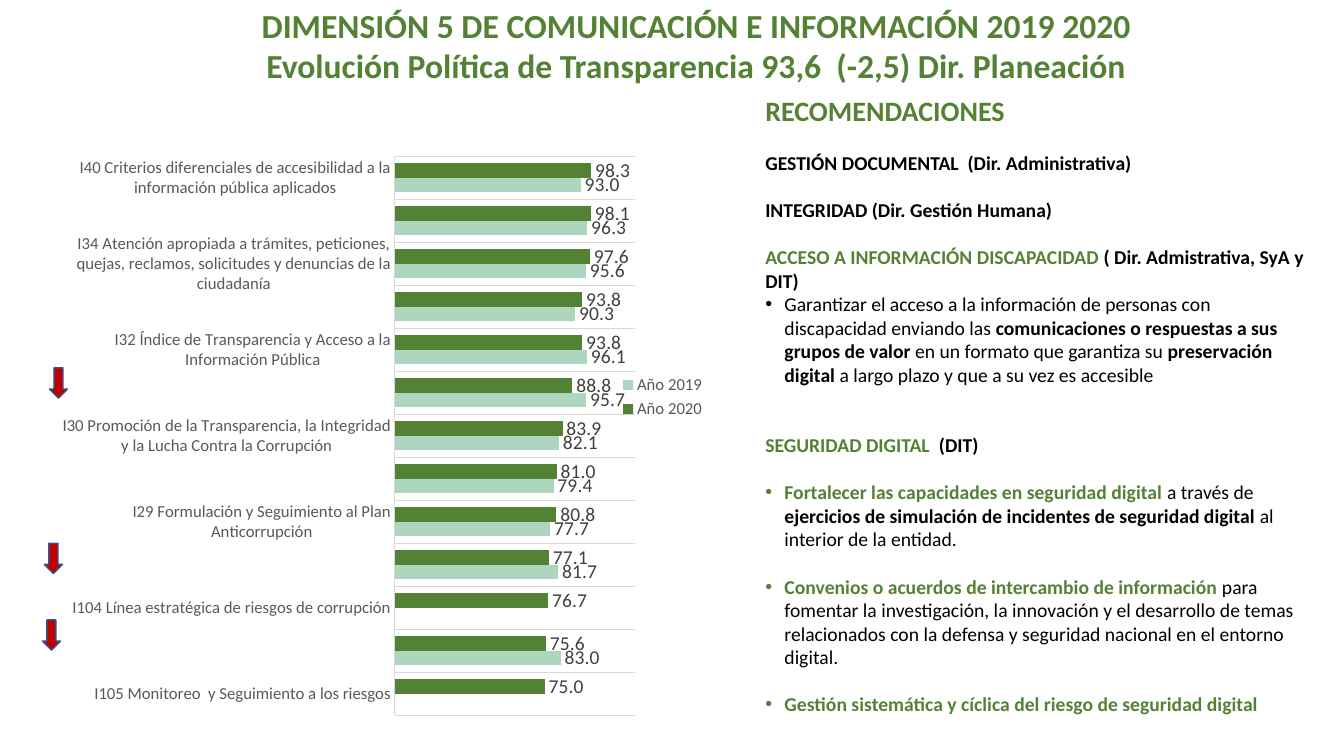
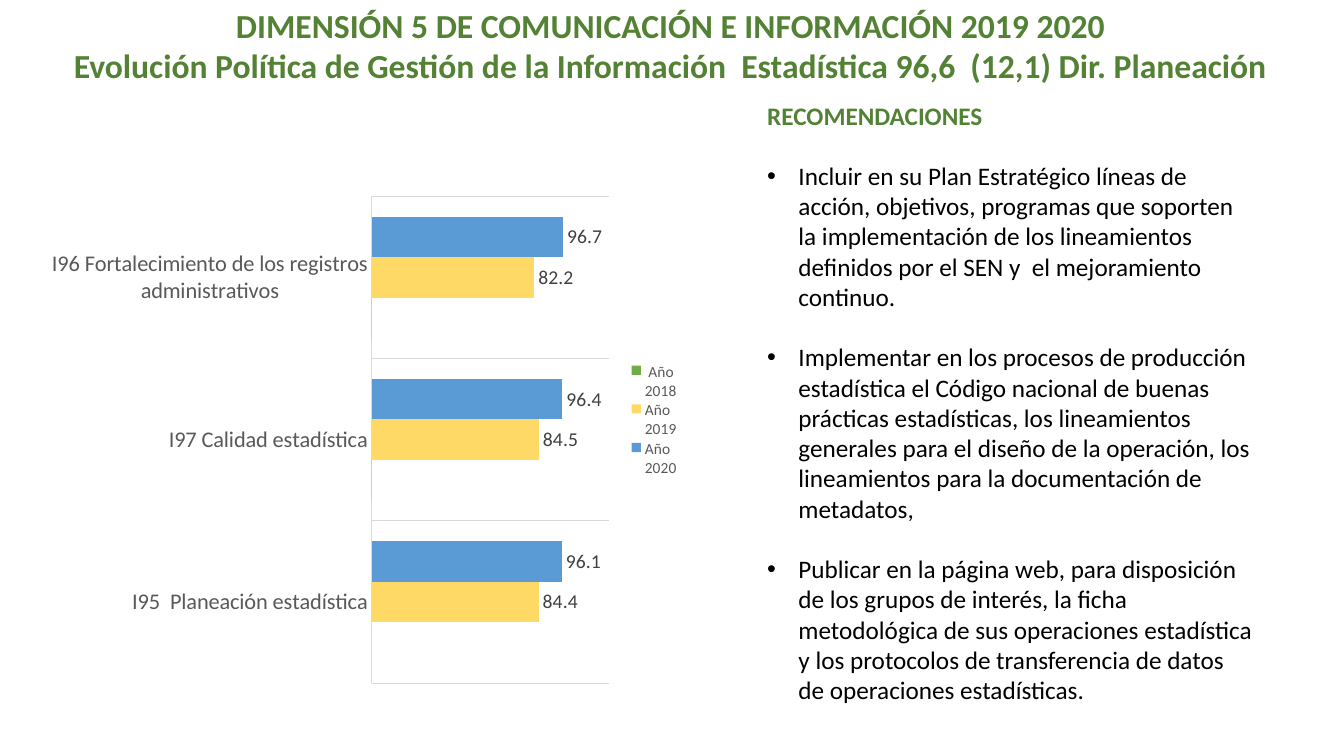
from dataclasses import dataclass

from lxml import etree
from pptx import Presentation
from pptx.chart.data import CategoryChartData
from pptx.dml.color import RGBColor
from pptx.enum import chart as charts, shapes, text
from pptx.oxml import ns
from pptx.util import Inches, Pt


@dataclass(frozen=True)
class Theme:
    font: str = "Calibri"
    green: RGBColor = RGBColor.from_string("548235")
    black: RGBColor = RGBColor.from_string("000000")
    axis_text: RGBColor = RGBColor.from_string("595959")
    label_text: RGBColor = RGBColor.from_string("404040")
    grid: RGBColor = RGBColor.from_string("D9D9D9")
    arrow: RGBColor = RGBColor.from_string("C00000")
    arrow_line: RGBColor = RGBColor.from_string("325491")
    title_size: int = 24
    label_size: int = 14


theme = Theme()
GREEN, BLACK = theme.green, theme.black


def style_font(font, size, color=None, bold=None):
    font.name = theme.font
    font.size = Pt(size)
    if color is not None:
        font.color.rgb = color
    if bold is not None:
        font.bold = bold


def set_layout(parent, position, bounds, inner=False):
    for old in parent.findall(ns.qn("c:layout")):
        parent.remove(old)
    layout = etree.Element(ns.qn("c:layout"))
    parent.insert(position, layout)
    manual = etree.SubElement(layout, ns.qn("c:manualLayout"))
    settings = [("layoutTarget", "inner")] if inner else []
    settings += [("xMode", "edge"), ("yMode", "edge")]
    settings += zip("xywh", bounds)
    for name, value in settings:
        etree.SubElement(manual, ns.qn("c:" + name)).set("val", str(value))


slides = [
    {
        "title": ["DIMENSIÓN 5 DE COMUNICACIÓN E INFORMACIÓN 2019 2020",
                  "Evolución Política de Transparencia 93,6  (-2,5) Dir. Planeación"],
        "title_box": (2.26, 0, 9.29, 0.91),
        "body_box": (7.49, 0.88, 5.6, 6.33), "body_outline": "rect",
        "heading_size": 20, "body_size": 14, "indent": 0.19,
        "body": [
            (0, False, [("RECOMENDACIONES", GREEN, True)]),
            (1, False, [("GESTIÓN DOCUMENTAL  (Dir. Administrativa)", BLACK, True)]),
            (1, False, [("INTEGRIDAD (Dir. Gestión Humana)", BLACK, True)]),
            (1, False, [("ACCESO A INFORMACIÓN DISCAPACIDAD ", GREEN, True),
                        ("( Dir. Admistrativa, SyA y DIT)", BLACK, True)]),
            (0, True, [("Garantizar el acceso a la información de personas con "
                        "discapacidad enviando las ", BLACK, False),
                       ("comunicaciones o respuestas a sus grupos de valor ", BLACK, True),
                       ("en un formato que garantiza su ", BLACK, False),
                       ("preservación digital ", BLACK, True),
                       ("a largo plazo y que a su vez es accesible", BLACK, False)]),
            (2, False, [("SEGURIDAD DIGITAL  ", GREEN, True), ("(DIT)", BLACK, True)]),
            (1, True, [("Fortalecer las capacidades en seguridad digital", GREEN, True),
                       (" a través de ", BLACK, False),
                       ("ejercicios de simulación de incidentes de seguridad digital", BLACK, True),
                       (" al interior de la entidad.", BLACK, False)]),
            (1, True, [("Convenios o acuerdos de intercambio de información ", GREEN, True),
                       ("para fomentar la investigación, la innovación y el desarrollo de temas "
                        "relacionados con la defensa y seguridad nacional en el entorno digital.",
                        BLACK, False)]),
            (1, True, [("Gestión sistemática y cíclica del riesgo de seguridad digital",
                        GREEN, True)]),
        ],
        "chart_box": (0.62, 0.77, 6.48, 6.34),
        "axis_size": 12, "legend_size": 12, "legend_bounds": None,
        "categories": [
            "I40 Criterios diferenciales de accesibilidad a la información pública aplicados",
            "I33 Divulgación proactiva de la información",
            "I34 Atención apropiada a trámites, peticiones, quejas, reclamos, solicitudes "
            "y denuncias de la ciudadanía",
            "I37 Institucionalización efectiva de la Política de Transparencia y acceso "
            "a la información pública",
            "I32 Índice de Transparencia y Acceso a la Información Pública",
            "I36 Lineamientos para el manejo y la seguridad de la información pública implementados",
            "I30 Promoción de la Transparencia, la Integridad y la Lucha Contra la Corrupción",
            "I31 Gestión de Riesgos de Corrupción",
            "I29 Formulación y Seguimiento al Plan Anticorrupción",
            "I35 Sistema de seguimiento al acceso a la información pública en funcionamiento",
            "I104 Línea estratégica de riesgos de corrupción",
            "I38 Gestión documental para el acceso a la información pública implementada",
            "I105 Monitoreo  y Seguimiento a los riesgos",
        ],
        "series": [
            ("Año 2020", "548235", True,
             [98.3, 98.1, 97.6, 93.8, 93.8, 88.8, 83.9, 81, 80.8, 77.1, 76.7, 75.6, 75]),
            ("Año 2019", "AED6BE", True,
             [93, 96.3, 95.6, 90.3, 96.1, 95.7, 82.1, 79.4, 77.7, 81.7, None, 83, None]),
        ],
        "arrows": [(0.49, 3.65), (0.44, 5.39), (0.42, 6.15)],
    },
    {
        "title": ["DIMENSIÓN 5 DE COMUNICACIÓN E INFORMACIÓN 2019 2020",
                  "Evolución Política de Gestión de la Información  Estadística 96,6  (12,1) "
                  "Dir. Planeación"],
        "title_box": (0.35, 0, 12.6, 0.91),
        "body_box": (7.51, 0.94, 5.03, 6.99), "body_outline": "foldedCorner",
        "heading_size": 18, "body_size": 18, "indent": 0.31,
        "body": [
            (0, False, [("RECOMENDACIONES", GREEN, True)]),
            (1, True, [("Incluir en su Plan Estratégico líneas de acción, objetivos, programas que "
                        "soporten la implementación de los lineamientos definidos por el SEN y  el "
                        "mejoramiento continuo.", BLACK, False)]),
            (1, True, [("Implementar en los procesos de producción estadística el Código nacional "
                        "de buenas prácticas estadísticas, los lineamientos generales para el "
                        "diseño de la operación, los lineamientos para la documentación de "
                        "metadatos,", BLACK, False)]),
            (1, True, [("Publicar en la página web, para disposición de los grupos de interés, la "
                        "ficha metodológica de sus operaciones estadística y los protocolos de "
                        "transferencia de datos de operaciones estadísticas.", BLACK, False)]),
        ],
        "chart_box": (0.46, 1.27, 6.38, 5.52),
        "axis_size": 16, "legend_size": 11, "legend_bounds": (0.9, 0.42, 0.09, 0.21),
        "categories": ["I96 Fortalecimiento de los registros administrativos",
                       "I97 Calidad estadística",
                       "I95  Planeación estadística"],
        "series": [
            ("Año 2020", "5B9BD5", True, [96.7, 96.4, 96.1]),
            ("Año 2019", "FFD966", True, [82.2, 84.5, 84.4]),
            (" Año 2018", "70AD47", False, [0, 0, None]),
        ],
        "arrows": [],
    },
]

presentation = Presentation()
presentation.slide_width = Inches(13.33)
presentation.slide_height = Inches(7.5)

for content in slides:
    slide = presentation.slides.add_slide(presentation.slide_layouts[1])
    title, body = slide.placeholders
    for shape, box in ((title, content["title_box"]), (body, content["body_box"])):
        shape.left, shape.top, shape.width, shape.height = map(Inches, box)
        shape.text_frame.word_wrap = True
        shape.text_frame.auto_size = text.MSO_AUTO_SIZE.NONE
        shape.text_frame.vertical_anchor = text.MSO_ANCHOR.TOP
    outline = etree.SubElement(body._element.spPr, ns.qn("a:prstGeom"))
    outline.set("prst", content["body_outline"])
    etree.SubElement(outline, ns.qn("a:avLst"))

    title.text_frame.text = "\n".join(content["title"])
    for paragraph in title.text_frame.paragraphs:
        paragraph.alignment = text.PP_ALIGN.CENTER
        style_font(paragraph.font, theme.title_size, theme.green, True)

    for index, (gap, bullet, runs) in enumerate(content["body"]):
        frame = body.text_frame
        paragraph = frame.add_paragraph() if index else frame.paragraphs[0]
        paragraph.alignment = text.PP_ALIGN.LEFT
        paragraph.space_before = Pt(round(gap * content["body_size"] * 1.2, 1))
        properties = paragraph._p.get_or_add_pPr()
        indent = Inches(content["indent"]) if bullet else 0
        properties.set("marL", str(indent))
        properties.set("indent", str(-indent))
        if bullet:
            etree.SubElement(properties, ns.qn("a:buFont")).set("typeface", "Arial")
            etree.SubElement(properties, ns.qn("a:buChar")).set("char", "•")
        else:
            etree.SubElement(properties, ns.qn("a:buNone"))
        style_font(paragraph.font, content["body_size"] if index else content["heading_size"])
        for words, color, bold in runs:
            run = paragraph.add_run()
            run.text = words
            run.font.color.rgb = color
            run.font.bold = bold

    data = CategoryChartData(number_format="0.0")
    data.categories = content["categories"]
    for name, color, labelled, values in content["series"]:
        data.add_series(name, values)
    chart = slide.shapes.add_chart(charts.XL_CHART_TYPE.BAR_CLUSTERED,
                                   *map(Inches, content["chart_box"]), data).chart
    chart.has_title = False
    style_font(chart.font, theme.label_size, theme.black)
    plot = chart.plots[0]
    plot.gap_width = 100
    plot.overlap = 0
    plot.vary_by_categories = False
    for series, (name, color, labelled, values) in zip(plot.series, content["series"]):
        series.format.fill.solid()
        series.format.fill.fore_color.rgb = RGBColor.from_string(color)
        if labelled:
            labels = series.data_labels
            labels.show_value = True
            labels.number_format = "0.0"
            labels.number_format_is_linked = False
            labels.position = charts.XL_LABEL_POSITION.OUTSIDE_END
            style_font(labels.font, theme.label_size, theme.label_text)

    axis = chart.category_axis
    axis.reverse_order = True
    axis.major_tick_mark = charts.XL_TICK_MARK.NONE
    axis.has_major_gridlines = True
    style_font(axis.tick_labels.font, content["axis_size"], theme.axis_text)
    for line in (axis.format.line, axis.major_gridlines.format.line):
        line.color.rgb = theme.grid
        line.width = Pt(0.75)
    chart.value_axis.minimum_scale = 0
    chart.value_axis.maximum_scale = 120
    chart.value_axis.has_major_gridlines = False
    chart.value_axis.visible = False

    chart.has_legend = True
    legend = chart.legend
    legend.position = charts.XL_LEGEND_POSITION.RIGHT
    legend.include_in_layout = False
    style_font(legend.font, content["legend_size"], theme.axis_text)
    plot_area = chart._chartSpace.chart.plotArea
    set_layout(plot_area, 0, (0.506, 0.123, 0.369, 0.875), inner=True)
    if content["legend_bounds"]:
        set_layout(legend._element, 1, content["legend_bounds"])

    for left, top in content["arrows"]:
        arrow = slide.shapes.add_shape(shapes.MSO_SHAPE.DOWN_ARROW, Inches(left), Inches(top),
                                       Inches(0.18), Inches(0.3))
        arrow.shadow.inherit = False
        arrow.fill.solid()
        arrow.fill.fore_color.rgb = theme.arrow
        arrow.line.color.rgb = theme.arrow_line
        arrow.line.width = Pt(1)

presentation.save("out.pptx")
